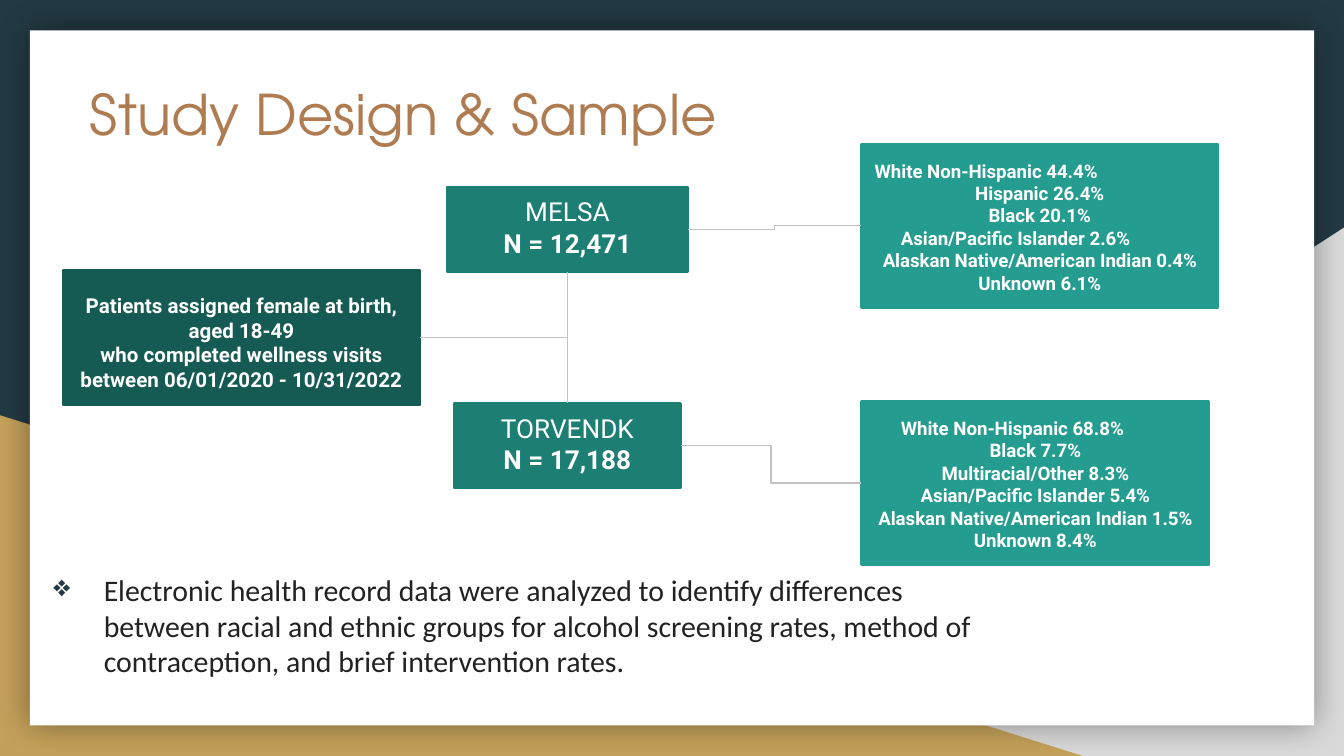
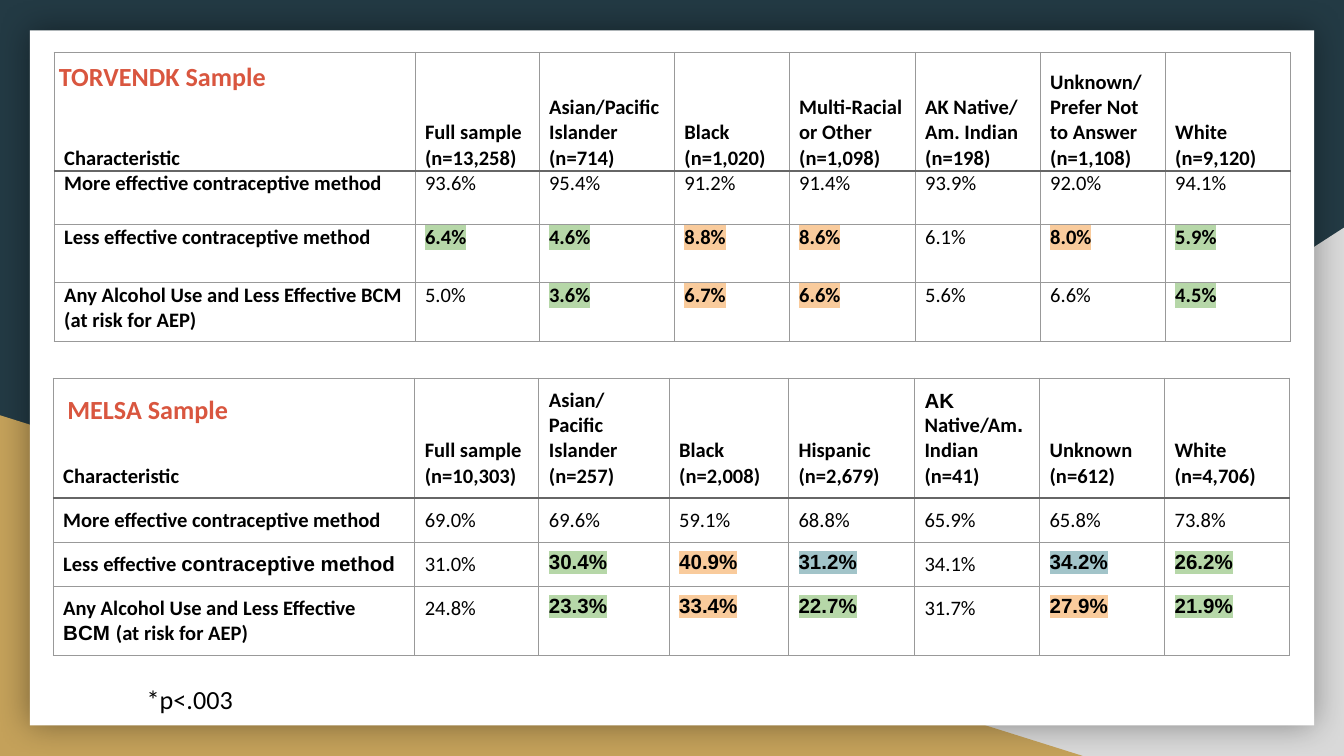
from lxml import etree
from pptx import Presentation
from pptx.dml.color import RGBColor
from pptx.enum import shapes, text
from pptx.oxml.ns import qn
from pptx.util import Pt

PRESET = shapes.MSO_SHAPE
ANCHOR = text.MSO_ANCHOR
ALIGN = text.PP_ALIGN
TOP, LEFT, BOTTOM, RIGHT = range(4)

NAVY, GOLD, GREY, WHITE, BLACK = "233A44", "C4A15A", "D9D9D9", "FFFFFF", "000000"
BRONZE, RED, INK, CONNECTOR = "AF7B51", "D9563F", "222222", "C2C2C2"
DARK_TEAL, TEAL, LIGHT_TEAL = "155B54", "1D7E74", "249C90"
GRID, HEADER_RULE = "999999", "666666"
HIGHLIGHTS = {"+": "B6D7A8", "!": "F9CB9C", "~": "A2C4C9"}
FIRST_CLINIC, SECOND_CLINIC = "MELSA", "TORVENDK"


def color(value):
    """Turn a hex string into a colour."""
    return RGBColor.from_string(value)


def add_xml(parent, tag, **attributes):
    """Append a drawing element and return it."""
    return etree.SubElement(parent, qn("a:" + tag), attributes)


def add_run(paragraph, words, size=11, font="Calibri", fill=BLACK, bold=False, highlight=None):
    """Add one formatted run to a paragraph."""
    run = paragraph.add_run()
    run.text = words
    run.font.size = Pt(size)
    run.font.name = font
    run.font.bold = bold
    run.font.color.rgb = color(fill)
    if highlight:
        properties = run.font._element
        mark = etree.Element(qn("a:highlight"))
        add_xml(mark, "srgbClr", val=highlight)
        properties.find(qn("a:latin")).addprevious(mark)


def prepare_frame(frame, anchor=ANCHOR.TOP, inset=7.2):
    """Set wrapping, anchor and equal margins of a text frame."""
    frame.word_wrap = True
    frame.auto_size = text.MSO_AUTO_SIZE.NONE
    frame.vertical_anchor = anchor
    frame.margin_left = frame.margin_right = Pt(inset)
    frame.margin_top = frame.margin_bottom = Pt(inset)


class Deck:
    """Hold the presentation, its style and the current slide."""

    def __init__(self):
        """Start a widescreen presentation."""
        self.presentation = Presentation()
        self.presentation.slide_width = Pt(720)
        self.presentation.slide_height = Pt(405)
        self.slide = None

    def add_slide(self, title=None):
        """Add a slide with the shared backdrop and an optional title."""
        layout = self.presentation.slide_layouts[5 if title else 6]
        self.slide = self.presentation.slides.add_slide(layout)
        background = self.slide.background.fill
        background.solid()
        background.fore_color.rgb = color(NAVY)
        right_triangle = self.add_shape(PRESET.RIGHT_TRIANGLE, (282, 122, 438, 283), GREY)
        right_triangle._element.spPr.find(qn("a:xfrm")).set("flipH", "1")
        self.add_shape(PRESET.RIGHT_TRIANGLE, (0, 222.5, 580, 182.5), GOLD)
        sheet = self.add_shape(PRESET.RECTANGLE, (16, 16.3, 688, 372.4), WHITE)
        effects = sheet._element.spPr.find(qn("a:effectLst"))
        shadow = add_xml(effects, "outerShdw", blurRad=str(Pt(18)), dist="0", dir="0",
                         algn="ctr", rotWithShape="0")
        add_xml(add_xml(shadow, "srgbClr", val=BLACK), "alpha", val="40000")
        if title:
            self.place_title(title)

    def place_title(self, words):
        """Move and format the title placeholder in front of the backdrop."""
        title = self.slide.shapes.title
        title.left, title.top, title.width, title.height = map(Pt, (41, 35.3, 591, 75))
        prepare_frame(title.text_frame)
        paragraph = title.text_frame.paragraphs[0]
        paragraph.alignment = ALIGN.LEFT
        add_run(paragraph, words, size=30, font="TeX Gyre Adventor", fill=BRONZE)
        self.slide.shapes._spTree.append(title._element)

    def add_shape(self, preset, box, fill, outline=None):
        """Add a filled preset shape without shadow."""
        shape = self.slide.shapes.add_shape(preset, *map(Pt, box))
        shape.shadow.inherit = False
        shape.fill.solid()
        shape.fill.fore_color.rgb = color(fill)
        if outline:
            shape.line.color.rgb = color(outline)
            shape.line.width = Pt(1.5)
        else:
            shape.line.fill.background()
        return shape

    def add_box(self, box, fill, lines, size, bold=(), offsets=None):
        """Add a diagram box; offsets give left-aligned lines their indent."""
        shape = self.add_shape(PRESET.RECTANGLE, box, fill, fill)
        frame = shape.text_frame
        prepare_frame(frame, ANCHOR.BOTTOM)
        for number, line in enumerate(lines):
            paragraph = frame.add_paragraph() if number else frame.paragraphs[0]
            paragraph.alignment = ALIGN.CENTER
            if offsets and number in offsets:
                paragraph.alignment = ALIGN.LEFT
                paragraph._p.get_or_add_pPr().set("marL", str(Pt(offsets[number])))
            add_run(paragraph, line, size=size, font="Roboto", fill=WHITE,
                    bold=not bold or number in bold)
        return shape

    def add_elbow(self, start, start_side, end, end_side, single_bend=False):
        """Join two boxes with a bent connector."""
        connector = self.slide.shapes.add_connector(shapes.MSO_CONNECTOR.ELBOW, 0, 0, 0, 0)
        connector.begin_connect(start, start_side)
        connector.end_connect(end, end_side)
        connector.line.color.rgb = color(CONNECTOR)
        connector.line.width = Pt(0.75)
        properties = connector._element.spPr
        add_xml(properties, "effectLst")
        if single_bend:
            properties.find(qn("a:prstGeom")).set("prst", "bentConnector2")

    def add_text(self, box, words, bullet=None, **style):
        """Add a text box, with a hanging bullet if one is given."""
        shape = self.slide.shapes.add_textbox(*map(Pt, box))
        prepare_frame(shape.text_frame)
        paragraph = shape.text_frame.paragraphs[0]
        if bullet:
            properties = paragraph._p.get_or_add_pPr()
            properties.set("marL", str(Pt(36)))
            properties.set("indent", str(Pt(-27)))
            add_xml(add_xml(properties, "buClr"), "srgbClr", val=NAVY)
            add_xml(properties, "buChar", char=bullet)
        add_run(paragraph, words, **style)

    def add_table(self, left, top, widths, heights, rows, padding, marked_font):
        """Add a bordered table; a mark before a value sets its highlight."""
        frame = self.slide.shapes.add_table(len(rows), len(widths), Pt(left), Pt(top),
                                            Pt(sum(widths)), Pt(sum(heights)))
        table = frame.table
        table.first_row = table.horz_banding = False
        for column, width in zip(table.columns, widths):
            column.width = Pt(width)
        for row, height in zip(table.rows, heights):
            row.height = Pt(height)
        for r, row in enumerate(rows):
            for c, words in enumerate(row):
                cell = table.cell(r, c)
                cell.vertical_anchor = ANCHOR.TOP if r else ANCHOR.BOTTOM
                cell.margin_left = cell.margin_right = Pt(5.4)
                cell.margin_top = cell.margin_bottom = Pt(padding)
                self.fill_cell(cell, words, r == 0 or c == 0, marked_font)
                self.add_borders(cell, r)

    def fill_cell(self, cell, words, label, marked_font):
        """Write a cell; bars in a label switch between Calibri and Arial."""
        paragraph = cell.text_frame.paragraphs[0]
        highlight = HIGHLIGHTS.get(words[0])
        if highlight:
            add_run(paragraph, words[1:], font=marked_font, bold=True, highlight=highlight)
            return
        for number, part in enumerate(words.split("|")):
            if part:
                add_run(paragraph, part, font="Arial" if number % 2 else "Calibri", bold=label)

    def add_borders(self, cell, row):
        """Draw the four borders, with a heavier rule below the header."""
        properties = cell._tc.get_or_add_tcPr()
        for side in "LRTB":
            heavy = (row, side) in ((0, "B"), (1, "T"))
            line = add_xml(properties, "ln" + side, w=str(Pt(1.5 if heavy else 0.5)))
            add_xml(add_xml(line, "solidFill"), "srgbClr", val=HEADER_RULE if heavy else GRID)
        cell.fill.background()


def build_design(deck):
    """Build the study design slide."""
    deck.add_slide("Study Design & Sample")
    patients = deck.add_box((33.8, 144.7, 191.2, 72.3), DARK_TEAL, [
        "Patients assigned female at birth, aged 18-49",
        "who completed wellness visits between 06/01/2020 - 10/31/2022"], 11)
    second = deck.add_box((243.2, 216, 121.6, 45.5), TEAL, [SECOND_CLINIC, "N = 17,188"], 14,
                          bold=(1,))
    first = deck.add_box((239.5, 100.2, 129, 45.5), TEAL, [FIRST_CLINIC, "N = 12,471"], 14,
                         bold=(1,))
    first_groups = deck.add_box((461.5, 77.2, 191, 87.5), LIGHT_TEAL, [
        "White Non-Hispanic 44.4%", "Hispanic 26.4%", "Black 20.1%",
        "Asian/Pacific Islander 2.6%", "Alaskan Native/American Indian 0.4%",
        "Unknown 6.1%"], 10, offsets={0: 0, 3: 14})
    second_groups = deck.add_box((461.5, 215, 186.2, 87.5), LIGHT_TEAL, [
        "White Non-Hispanic 68.8%", "Black 7.7%", "Multiracial/Other 8.3%",
        "Asian/Pacific Islander 5.4%", "Alaskan Native/American Indian 1.5%",
        "Unknown 8.4%"], 10, offsets={0: 14})
    deck.add_elbow(patients, RIGHT, first, BOTTOM, single_bend=True)
    deck.add_elbow(patients, RIGHT, second, TOP, single_bend=True)
    deck.add_elbow(first, RIGHT, first_groups, LEFT)
    deck.add_elbow(second, RIGHT, second_groups, LEFT)
    deck.add_text((12.5, 299, 536, 105),
                  "Electronic health record data were analyzed to identify differences between "
                  "racial and ethnic groups for alcohol screening rates, method of contraception, "
                  "and brief intervention rates.", bullet="❖", size=16, fill=INK)


def build_results(deck):
    """Build the slide with one table per sample."""
    deck.add_slide()
    deck.add_table(29, 28, [193.3, 66.5, 72.5, 61.5, 67.5, 67, 67, 67.3], [63.5, 28.8, 31, 31.7], [
        ["Characteristic", "Full sample (n=13,258)", "Asian/Pacific Islander (n=714)",
         "Black (n=1,020)", "Multi-Racial or Other (n=1,098)", "AK Native/ Am. Indian (n=198)",
         "Unknown/ Prefer Not to Answer (n=1,108)", "White (n=9,120)"],
        ["More effective contraceptive method",
         "93.6%", "95.4%", "91.2%", "91.4%", "93.9%", "92.0%", "94.1%"],
        ["Less effective contraceptive method",
         "+6.4%", "+4.6%", "!8.8%", "!8.6%", "6.1%", "!8.0%", "+5.9%"],
        ["Any Alcohol Use and Less Effective BCM (at risk for AEP)",
         "5.0%", "+3.6%", "!6.7%", "!6.6%", "5.6%", "6.6%", "+4.5%"],
    ], padding=0, marked_font="Calibri")
    deck.add_table(28.5, 202.5, [193.7, 66.5, 69.8, 64, 67.5, 67, 67, 67], [64, 22.3, 18, 32.4], [
        ["Characteristic", "Full sample (n=10,303)", "Asian/Pacific Islander (n=257)",
         "Black (n=2,008)", "Hispanic (n=2,679)", "|AK |Native/Am|. |Indian (n=41)",
         "Unknown (n=612)", "White (n=4,706)"],
        ["More effective contraceptive method",
         "69.0%", "69.6%", "59.1%", "68.8%", "65.9%", "65.8%", "73.8%"],
        ["Less effective |contraceptive method",
         "31.0%", "+30.4%", "!40.9%", "~31.2%", "34.1%", "~34.2%", "+26.2%"],
        ["Any Alcohol Use and Less Effective |BCM |(at risk for AEP)",
         "24.8%", "+23.3%", "!33.4%", "+22.7%", "31.7%", "!27.9%", "+21.9%"],
    ], padding=5, marked_font="Arial")
    for name, box in ((SECOND_CLINIC, (24.5, 25.2, 129, 30)), (FIRST_CLINIC, (29, 203.8, 111, 30))):
        deck.add_text(box, name + " Sample", size=14, fill=RED, bold=True)
    deck.add_text((71.5, 359, 456, 19.5), "*p<.003", size=14)


def main():
    """Build both slides and save the file."""
    deck = Deck()
    build_design(deck)
    build_results(deck)
    deck.presentation.save("out.pptx")


if __name__ == "__main__":
    main()
